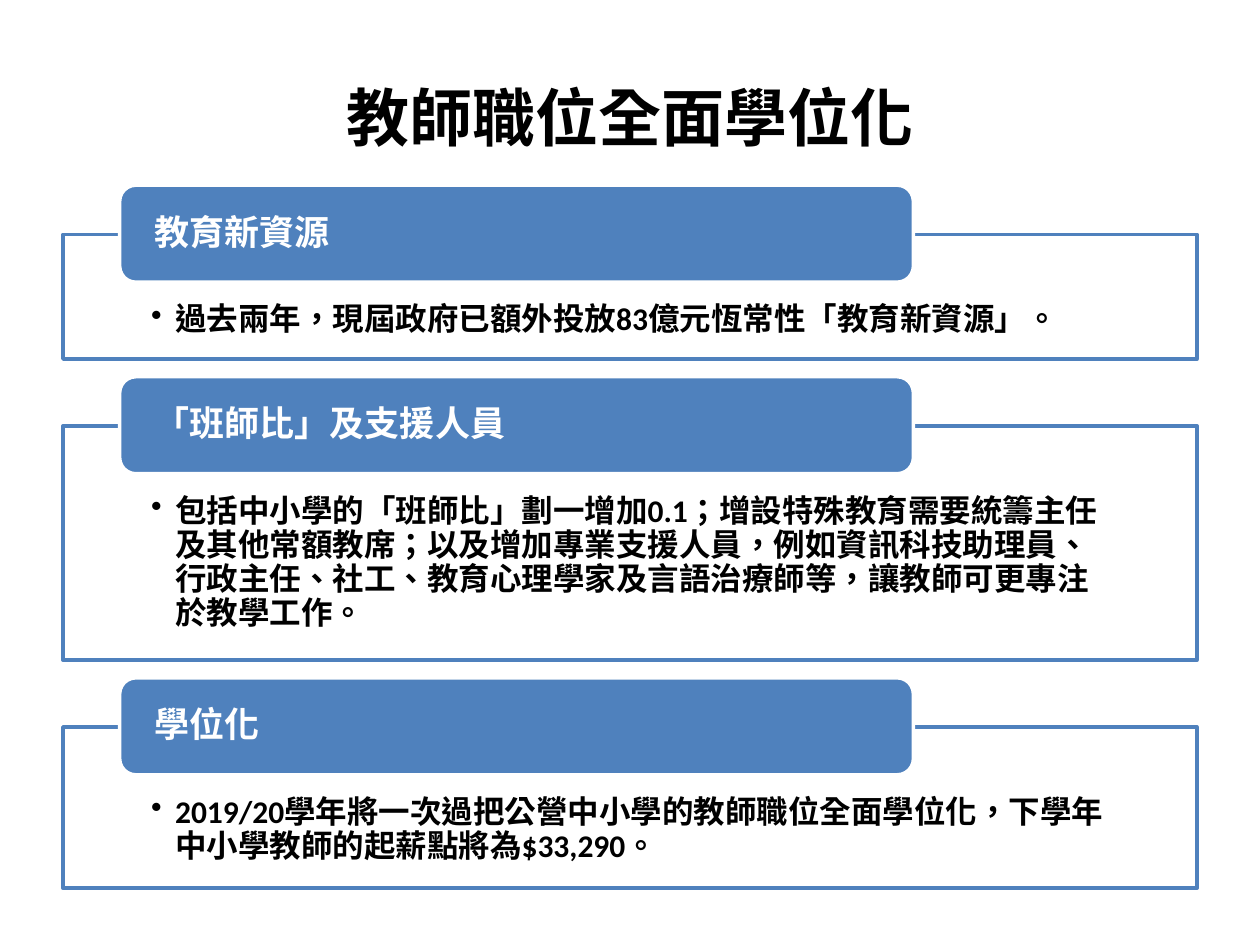
from pptx import Presentation
from pptx.dml.color import RGBColor
from pptx.enum.lang import MSO_LANGUAGE_ID
from pptx.enum.shapes import MSO_SHAPE
from pptx.enum.text import MSO_ANCHOR, PP_ALIGN
from pptx.oxml.ns import qn
from pptx.util import Inches, Pt
from lxml import etree

RECT, ROUNDED = MSO_SHAPE.RECTANGLE, MSO_SHAPE.ROUNDED_RECTANGLE
TOP, MIDDLE = MSO_ANCHOR.TOP, MSO_ANCHOR.MIDDLE
LEFT, CENTER = PP_ALIGN.LEFT, PP_ALIGN.CENTER
CHINESE = MSO_LANGUAGE_ID.TRADITIONAL_CHINESE

COLORS = {"blue": "4F81BD", "white": "FFFFFF", "black": "000000"}
FONT = "Calibri"

FIRST_TOP = 1.47       # top of the first heading
HEADING_HEIGHT = 0.77
PANEL_OFFSET = 0.39    # from heading top to panel top
SECTION_GAP = 0.14
BULLET_INDENT = 0.19

# Heading, body text, panel height
SECTIONS = [
    ("教育新資源",
     "過去兩年，現屆政府已額外投放83億元恆常性「教育新資源」。", 0.99),
    ("「班師比」及支援人員",
     "包括中小學的「班師比」劃一增加0.1；增設特殊教育需要統籌主任及其他常額教席；"
     "以及增加專業支援人員，例如資訊科技助理員、行政主任、社工、教育心理學家及"
     "言語治療師等，讓教師可更專注於教學工作。", 1.86),
    ("學位化",
     "2019/20學年將一次過把公營中小學的教師職位全面學位化，"
     "下學年中小學教師的起薪點將為$33,290。", 1.28),
]


def color(name):
    return RGBColor.from_string(COLORS[name])


def write_text(shape, text, size, ink, anchor, align, insets, spacing=1.0):
    """Fill a shape with one bold paragraph and return the paragraph."""
    frame = shape.text_frame
    frame.word_wrap = True
    frame.vertical_anchor = anchor
    for side, inset in zip(("left", "top", "right", "bottom"), insets):
        setattr(frame, f"margin_{side}", Inches(inset))
    para = frame.paragraphs[0]
    para.alignment = align
    para.line_spacing = spacing
    span = para.add_run()
    span.text = text
    formats = {"name": FONT, "size": Pt(size), "bold": True,
               "language_id": CHINESE}
    for name, value in formats.items():
        setattr(span.font, name, value)
    span.font.color.rgb = color(ink)
    return para


def add_box(page, kind, bounds, fill, line):
    box = page.shapes.add_shape(kind, *map(Inches, bounds))
    box.shadow.inherit = False
    box.fill.solid()
    box.fill.fore_color.rgb = color(fill)
    box.line.color.rgb = color(line)
    box.line.width = Pt(2)
    return box


def set_opacity(box, percent):
    tint = box.fill._xPr.find(qn("a:solidFill"))[0]
    etree.SubElement(tint, qn("a:alpha")).set("val", str(percent * 1000))


def add_bullet(para):
    props = para._p.get_or_add_pPr()
    props.set("marL", str(Inches(BULLET_INDENT)))
    props.set("indent", str(-Inches(BULLET_INDENT)))
    etree.SubElement(props, qn("a:buChar")).set("char", "•")


def add_title(page, text):
    box = page.shapes.add_textbox(*map(Inches, (0.5, 0.3, 9, 1.25)))
    write_text(box, text, 36, "black", MIDDLE, CENTER, (0.1, 0.05, 0.1, 0.05))


def add_section(page, top, heading, body, height):
    # Outlined panel with a bulleted paragraph
    panel = add_box(page, RECT, (0.5, top + PANEL_OFFSET, 9, height),
                    "white", "blue")
    set_opacity(panel, 90)
    add_bullet(write_text(panel, body, 18, "black", TOP, LEFT,
                          (0.7, 0.55, 0.7, 0.14), 0.9))

    # Heading bar over the panel's top edge
    bar = add_box(page, ROUNDED, (0.95, top, 6.3, HEADING_HEIGHT),
                  "blue", "white")
    write_text(bar, heading, 20, "white", MIDDLE, LEFT,
               (0.24, 0, 0.24, 0), 0.9)


def main():
    deck = Presentation()
    deck.slide_width, deck.slide_height = Inches(10), Inches(7.5)
    page = deck.slides.add_slide(deck.slide_layouts[6])

    add_title(page, "教師職位全面學位化")
    top = FIRST_TOP
    for heading, body, height in SECTIONS:
        add_section(page, top, heading, body, height)
        top += PANEL_OFFSET + height + SECTION_GAP

    deck.save("out.pptx")


if __name__ == "__main__":
    main()
